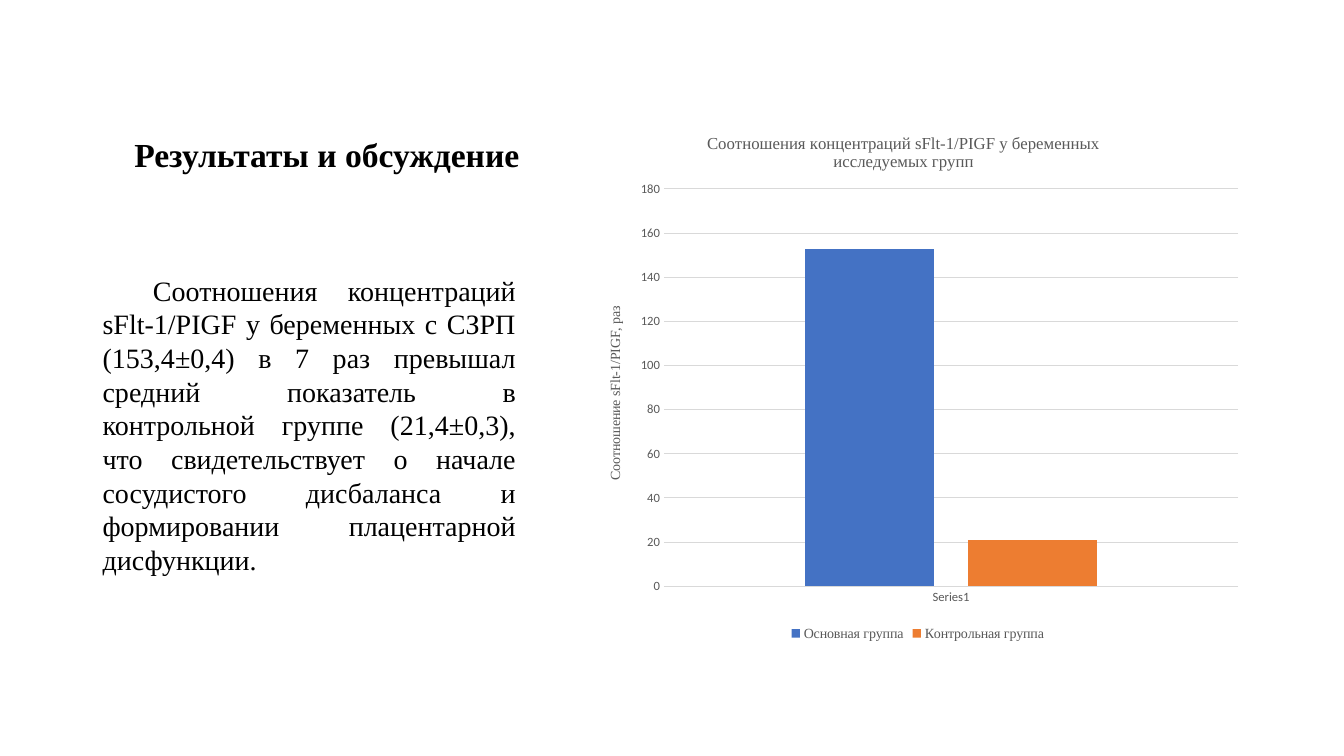
import pptx
import pptx.chart.data
import pptx.dml.color
import pptx.enum.chart
import pptx.enum.text
import pptx.oxml
import pptx.oxml.ns
import pptx.util

Pt = pptx.util.Pt
SERIF = "Times New Roman"
COLORS = {"ink": "000000", "gray": "595959", "grid": "D9D9D9",
          "main": "4472C4", "control": "ED7D31"}


def color(name):
    return pptx.dml.color.RGBColor.from_string(COLORS[name])


def style(font, size, tone, face=SERIF, bold=False):
    font.size, font.name, font.bold = Pt(size), face, bold
    font.color.rgb = color(tone)


def add_text(slide, box, text, size, align, bold=False):
    frame = slide.shapes.add_textbox(*map(Pt, box)).text_frame
    frame.word_wrap = True
    frame.vertical_anchor = pptx.enum.text.MSO_ANCHOR.MIDDLE
    para = frame.paragraphs[0]
    para.text, para.alignment = text, align
    style(para.font, size, "ink", bold=bold)
    return frame


def add_heading(slide, box):
    frame = add_text(slide, box, "Результаты и обсуждение", 24,
                     pptx.enum.text.PP_ALIGN.CENTER, True)
    frame.paragraphs[0].line_spacing = 0.9


def add_body(slide, box):
    text = ("Соотношения концентраций sFlt-1/PIGF у беременных с СЗРП "
            "(153,4±0,4) в 7 раз превышал средний показатель в контрольной "
            "группе (21,4±0,3), что свидетельствует о начале сосудистого "
            "дисбаланса и формировании плацентарной дисфункции.")
    frame = add_text(slide, box, text, 20, pptx.enum.text.PP_ALIGN.JUSTIFY)
    frame.margin_bottom = Pt(21)
    frame.paragraphs[0]._p.get_or_add_pPr().set("indent", str(Pt(36)))


def place(parent, index, **parts):
    for old in parent.findall(pptx.oxml.ns.qn("c:layout")):
        parent.remove(old)
    target = '<c:layoutTarget val="inner"/>' if "w" in parts else ""
    modes = "".join(f'<c:{k}Mode val="edge"/>' for k in "xy")
    sizes = "".join(f'<c:{k} val="{v}"/>' for k, v in parts.items())
    parent.insert(index, pptx.oxml.parse_xml(
        f'<c:layout {pptx.oxml.ns.nsdecls("c")}><c:manualLayout>'
        f'{target}{modes}{sizes}</c:manualLayout></c:layout>'))


def set_title(title, lines, size):
    frame = title.text_frame
    frame.text = lines
    for para in frame.paragraphs:
        style(para.font, size, "gray")


def add_chart(slide, box):
    data = pptx.chart.data.CategoryChartData()
    data.categories = ["Series1"]
    data.add_series("Основная группа", [153])
    data.add_series("Контрольная группа", [21])
    chart = slide.shapes.add_chart(
        pptx.enum.chart.XL_CHART_TYPE.COLUMN_CLUSTERED,
        *map(Pt, box), data).chart
    style(chart.font, 10, "ink", "Calibri")

    chart.has_title = True
    set_title(chart.chart_title, "Соотношения концентраций sFlt-1/PIGF "
              "у беременных\nисследуемых групп", 12)
    place(chart.chart_title._element, 1, x=0.18, y=0.04)
    place(chart._chartSpace.chart.plotArea, 0, x=0.12, y=0.15, w=0.86, h=0.74)

    chart.has_legend = True
    legend = chart.legend
    legend.position = pptx.enum.chart.XL_LEGEND_POSITION.BOTTOM
    legend.include_in_layout = False
    style(legend.font, 10, "gray")

    plot = chart.plots[0]
    plot.gap_width, plot.overlap, plot.vary_by_categories = 219, -27, False
    for series, tone in zip(plot.series, ("main", "control")):
        series.format.fill.solid()
        series.format.fill.fore_color.rgb = color(tone)

    cats, vals = chart.category_axis, chart.value_axis
    for axis in (cats, vals):
        axis.major_tick_mark = pptx.enum.chart.XL_TICK_MARK.NONE
        axis.minor_tick_mark = pptx.enum.chart.XL_TICK_MARK.NONE
        style(axis.tick_labels.font, 9, "gray", "Calibri")
    vals.minimum_scale, vals.maximum_scale, vals.major_unit = 0, 180, 20
    vals.tick_labels.number_format = "0"
    vals.tick_labels.number_format_is_linked = False
    vals.has_major_gridlines = True
    for line in (cats.format.line, vals.major_gridlines.format.line):
        line.color.rgb, line.width = color("grid"), Pt(0.75)
    vals.format.line.fill.background()
    set_title(vals.axis_title, "Соотношение sFlt-1/PIGF, раз", 10)


def main():
    deck = pptx.Presentation()
    deck.slide_width, deck.slide_height = Pt(960), Pt(540)
    slide = deck.slides.add_slide(deck.slide_layouts[6])
    add_heading(slide, (66, 78, 335, 68))
    add_body(slide, (66.2, 162, 309.4, 300))
    add_chart(slide, (417, 77.5, 477, 383.5))
    deck.save("out.pptx")


if __name__ == "__main__":
    main()
